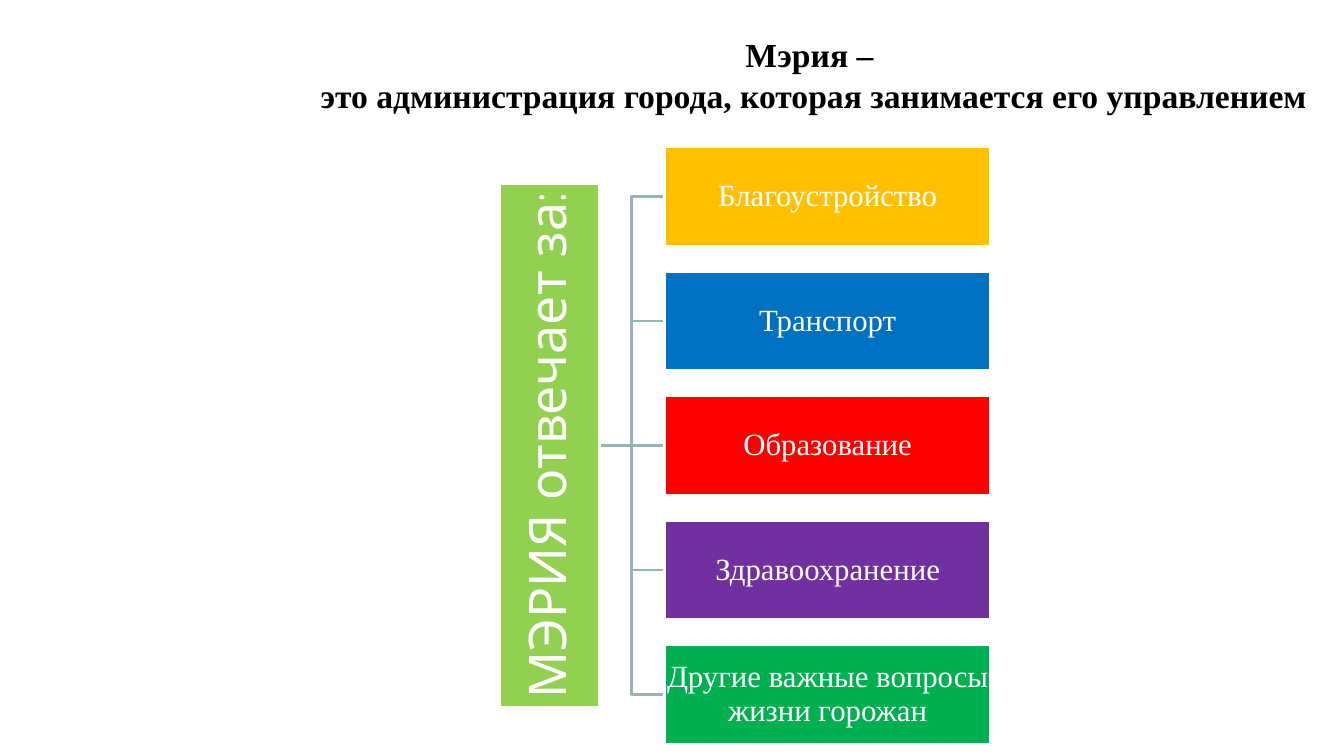
from lxml import etree
from pptx import Presentation
from pptx import util as u
from pptx.dml.color import RGBColor
from pptx.enum import shapes, text
from pptx.oxml.ns import qn

COLORS = {"text": "000000", "white": "FFFFFF", "line": "96B3B6",
          "bar": "92D050", "yellow": "FFC000", "blue": "0070C0",
          "red": "FF0000", "purple": "7030A0", "green": "00B050"}
TOPICS = [("Благоустройство", "yellow"), ("Транспорт", "blue"),
          ("Образование", "red"), ("Здравоохранение", "purple"),
          ("Другие важные вопросы жизни горожан", "green")]
SERIF = "Times New Roman"
BOX_LEFT, BOX_TOP, BOX_W, BOX_H, PITCH = 49.43, 19.41, 24.3, 13.17, 16.47
BAR_LEFT, BAR_W, BAR_H = 37.17, 7.41, 69.33


class Deck:
    """Draws styled elements on one slide, with lengths in percent of its size."""

    def __init__(self):
        self.prs = Presentation()
        self.prs.slide_width, self.prs.slide_height = u.Inches(13.33), u.Inches(7.5)
        self.s = self.prs.slides.add_slide(self.prs.slide_layouts[6])

    def place(self, x, y, w, h):
        sw, sh = self.prs.slide_width, self.prs.slide_height
        return [int(share * size / 100) for share, size in zip((x, y, w, h), (sw, sh, sw, sh))]

    def add_lines(self, tf, lines, color, spacing, fmt):
        for i, line in enumerate(lines):
            p = tf.paragraphs[0] if i == 0 else tf.add_paragraph()
            p.alignment, p.line_spacing = text.PP_ALIGN.CENTER, spacing
            r = p.add_run()
            r.text = line
            r.font.color.rgb = RGBColor.from_string(COLORS[color])
            for name, value in fmt.items():
                setattr(r.font, name, value)

    def title(self, area, lines, fmt):
        tf = self.s.shapes.add_textbox(*self.place(*area)).text_frame
        tf.word_wrap, tf.auto_size = True, text.MSO_AUTO_SIZE.SHAPE_TO_FIT_TEXT
        self.add_lines(tf, lines, "text", 1.0, fmt)

    def box(self, area, label, fill, fmt, inset=0.02):
        sp = self.s.shapes.add_shape(shapes.MSO_SHAPE.RECTANGLE, *self.place(*area))
        sp.shadow.inherit = False
        sp.fill.solid()
        sp.fill.fore_color.rgb = RGBColor.from_string(COLORS[fill])
        sp.line.color.rgb = RGBColor.from_string(COLORS["white"])
        sp.line.width = u.Pt(2)
        tf = sp.text_frame
        tf.word_wrap, tf.vertical_anchor = True, text.MSO_ANCHOR.MIDDLE
        for side in ("left", "top", "right", "bottom"):
            setattr(tf, f"margin_{side}", u.Inches(inset))
        self.add_lines(tf, [label], "white", 0.9, fmt)
        return sp

    def upright(self, sp):
        sp.element.txBody.find(qn("a:bodyPr")).set("vert", "vert270")

    def link(self, start, end, kind):
        c = self.s.shapes.add_connector(kind, 0, 0, 0, 0)
        c.begin_connect(start, 3)
        c.end_connect(end, 1)
        c.line.color.rgb = RGBColor.from_string(COLORS["line"])
        c.line.width = u.Pt(2)
        etree.SubElement(c.element.spPr, qn("a:effectLst"))
        start.element.addprevious(c.element)


def main():
    deck = Deck()
    deck.title((21, 3.87, 79.07, 12.13),
               ["Мэрия – ", "это администрация города, которая занимается его управлением"],
               {"name": SERIF, "size": u.Pt(24), "bold": True})

    middle = len(TOPICS) // 2
    center = BOX_TOP + middle * PITCH + BOX_H / 2
    bar = deck.box((BAR_LEFT, center - BAR_H / 2, BAR_W, BAR_H), "МЭРИЯ отвечает за:", "bar",
                   {"name": "Quicksand", "size": u.Pt(37)}, 0.03)
    deck.upright(bar)

    for i, (label, fill) in enumerate(TOPICS):
        sp = deck.box((BOX_LEFT, BOX_TOP + i * PITCH, BOX_W, BOX_H), label, fill,
                      {"name": SERIF, "size": u.Pt(22)})
        kind = shapes.MSO_CONNECTOR.STRAIGHT if i == middle else shapes.MSO_CONNECTOR.ELBOW
        deck.link(bar, sp, kind)

    deck.prs.save("out.pptx")


if __name__ == "__main__":
    main()
